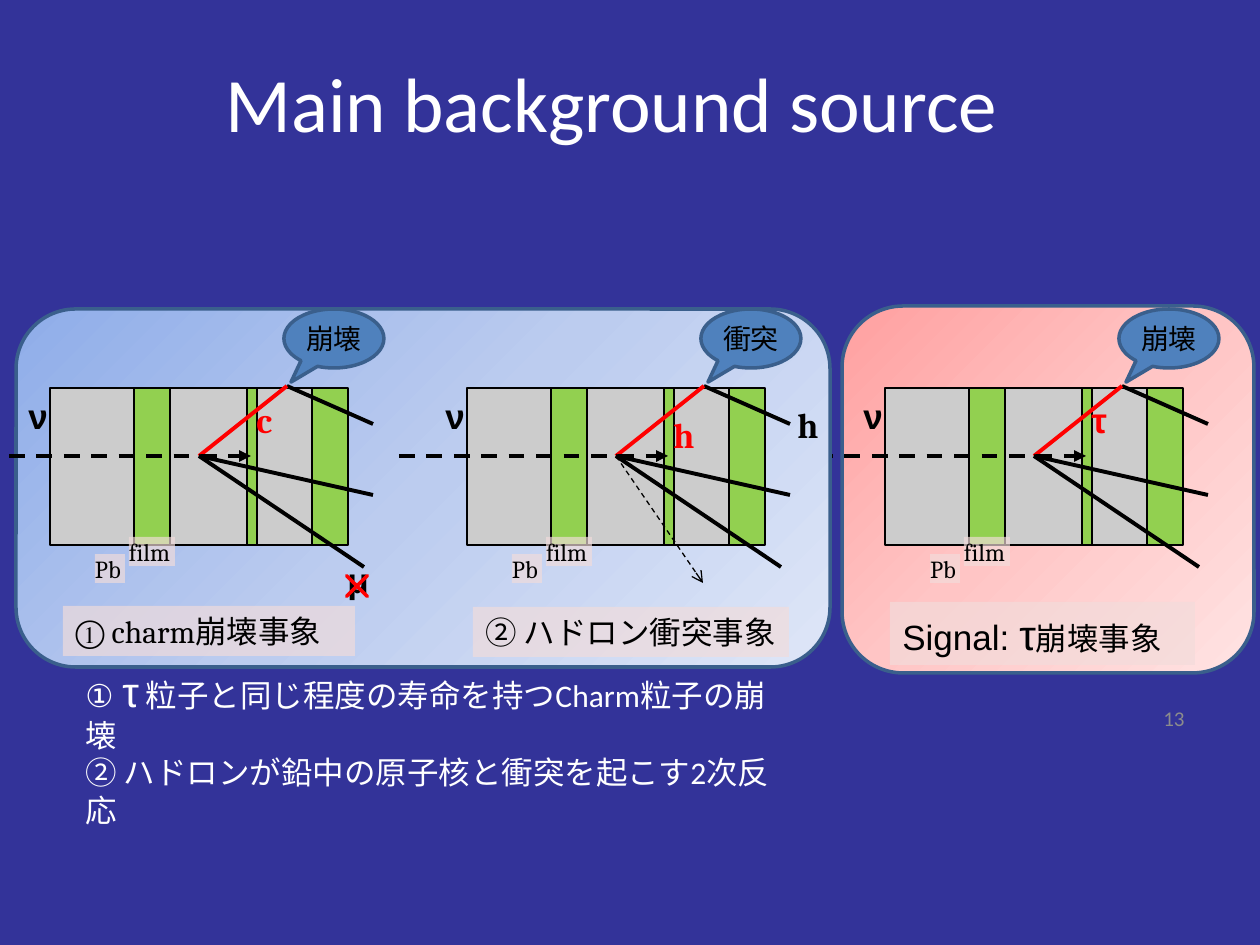
from copy import deepcopy
from lxml import etree
from pptx import Presentation
from pptx import util as u
from pptx.dml.color import RGBColor
from pptx.enum import dml, shapes, text
from pptx.oxml.ns import qn

PX = 914400 / 126
BLACK = RGBColor(0x00, 0x00, 0x00)
WHITE = RGBColor(0xFF, 0xFF, 0xFF)
RED = RGBColor(0xFF, 0x00, 0x00)
GRAY = RGBColor(0xCC, 0xCC, 0xCC)
GREEN = RGBColor(0x92, 0xD0, 0x50)
BLUE = RGBColor(0x4F, 0x81, 0xBD)
EDGE = RGBColor(0x3A, 0x5F, 0x8C)
PINK = RGBColor(0xF2, 0xDC, 0xDB)
MUTED = RGBColor(0x8C, 0x8C, 0x8C)
NAVY = RGBColor(0x33, 0x33, 0x99)
COOL = [RGBColor(0x8F, 0xAD, 0xE9), RGBColor(0xBC, 0xCC, 0xEF), RGBColor(0xDE, 0xE6, 0xF7)]
WARM = [RGBColor(0xFF, 0xA0, 0xA0), RGBColor(0xFF, 0xC5, 0xC5), RGBColor(0xFF, 0xE3, 0xE3)]
KIND = shapes.MSO_SHAPE
ALIGN = text.PP_ALIGN

deck = Presentation()
deck.slide_width, deck.slide_height = u.Inches(10), u.Inches(7.5)
slide = deck.slides.add_slide(deck.slide_layouts[6])
slide.background.fill.solid()
slide.background.fill.fore_color.rgb = NAVY


def draw(kind, area, fill=None, edge=None, width=2, alpha=None):
    place = [int(n * PX) for n in area]
    if kind is None:
        item = slide.shapes.add_textbox(*place)
    else:
        item = slide.shapes.add_shape(kind, *place)
        item.shadow.inherit = False
        if isinstance(fill, list):
            item.fill.gradient()
            item.fill.gradient_angle = 315
            stops = item._element.spPr.find(".//" + qn("a:gsLst"))
            stops.insert(1, deepcopy(stops[0]))
            for stop, tone, spot in zip(item.fill.gradient_stops, fill, (0, 0.5, 1)):
                stop.color.rgb, stop.position = tone, spot
        else:
            item.fill.solid()
            item.fill.fore_color.rgb = fill
        if alpha:
            tone = item._element.spPr.find(".//" + qn("a:srgbClr"))
            etree.SubElement(tone, qn("a:alpha"), val=str(alpha * 1000))
        if edge is None:
            item.line.fill.background()
        else:
            item.line.color.rgb, item.line.width = edge, u.Pt(width)
    item.text_frame.word_wrap = True
    item.text_frame.vertical_anchor = text.MSO_ANCHOR.TOP
    return item


def write(para, runs, color=BLACK, bold=False, align=ALIGN.LEFT):
    para.alignment = align
    para.font.color.rgb, para.font.bold = color, bold
    for words, size, face in runs:
        run = para.add_run()
        run.text = words
        font = para.font if len(runs) == 1 else run.font
        font.size, font.name = u.Pt(size), face


page = draw(None, (903, 687, 294, 63))
page.text_frame.vertical_anchor = text.MSO_ANCHOR.MIDDLE
write(page.text_frame.paragraphs[0], [("13", 12, "Calibri")], MUTED, align=ALIGN.RIGHT)
title = draw(None, (213, 49, 806, 106))
title.text_frame.word_wrap = False
write(title.text_frame.paragraphs[0], [("Main background source", 44, "Calibri")], WHITE)

bars = [(228, 85, GRAY), (312, 36, GREEN), (221, 36, GREEN),
        (170, 77, GRAY), (50, 84, GRAY), (134, 36, GREEN)]
tracks = [(287, 386, 373, 424, BLACK), (199, 456, 287, 386, RED),
          (199, 456, 373, 495, BLACK), (199, 456, 364, 567, BLACK)]
panels = [
    (835, "崩壊", [("τ", "Arial", 244, 392, RED)],
     (890, 602, 305, 63), [("Signal: ", 20, "Arial"), ("τ", 24, "Arial"), ("崩壊事象", 18, "Cambria")]),
    (0, "崩壊", [("c", "Cambria", 244, 392, RED), ("μ", "Arial", 335, 552, BLACK)],
     (63, 606, 292, 50), [("① charm崩壊事象", 18, "Cambria")]),
    (417, "衝突", [("h", "Cambria", 244, 407, RED), ("h", "Cambria", 368, 397, BLACK)],
     (473, 607, 316, 50), [("② ハドロン衝突事象", 18, "Cambria")]),
]
frames = {835: ((842, 306, 412, 367), WARM), 0: ((16, 309, 814, 358), COOL)}

for left, event, marks, spot, label in panels:
    if left in frames:
        area, tones = frames[left]
        draw(KIND.ROUNDED_RECTANGLE, area, tones, EDGE)

    beam = draw(None, (left + 16, 388, 60, 98)).text_frame.paragraphs[0]
    write(beam, [("ν", 20, "Arial")], bold=True, align=ALIGN.JUSTIFY)

    for x, wide, tone in bars:
        draw(KIND.RECTANGLE, (left + x, 388, wide, 157), tone, BLACK, 0.75)

    for words, face, x, y, tone in marks:
        mark = draw(None, (left + x, y, 58 if words == "μ" else 36, 62))
        write(mark.text_frame.paragraphs[0], [(words, 20, face)], tone, True, ALIGN.JUSTIFY)

    lines = [(*track, 2.25, None) for track in tracks]
    lines.append((max(9 - left, -18), 456, 251, 456, BLACK, 2.25, "triangle"))
    if left == 417:
        lines.append((199, 456, 286, 583, BLACK, 0.75, "arrow"))
    for x1, y1, x2, y2, tone, wide, head in lines:
        ends = [int(n * PX) for n in (left + x1, y1, left + x2, y2)]
        line = slide.shapes.add_connector(shapes.MSO_CONNECTOR.STRAIGHT, *ends)
        line.line.color.rgb, line.line.width = tone, u.Pt(wide)
        if head:
            line.line.dash_style = dml.MSO_LINE.DASH
            etree.SubElement(line.line._get_or_add_ln(), qn("a:tailEnd"), type=head)
        etree.SubElement(line._element.spPr, qn("a:effectLst"))

    if left == 0:
        cross = draw(KIND.MATH_MULTIPLY, (337, 566, 40, 40), BLUE, RED)
        cross.adjustments[0] = 0

    bubble = draw(KIND.OVAL_CALLOUT, (left + 284, 309, 100, 59), BLUE, EDGE)
    bubble.adjustments[0], bubble.adjustments[1] = -0.43, 0.74
    frame = bubble.text_frame
    frame.vertical_anchor = text.MSO_ANCHOR.MIDDLE
    frame.margin_left = frame.margin_right = frame.margin_top = frame.margin_bottom = int(2 * PX)
    write(frame.paragraphs[0], [(event, 16, "Cambria")], align=ALIGN.CENTER)

    for words, x, y, wide in (("Pb", 95, 554, 30), ("film", 129, 537, 46)):
        frame = draw(KIND.RECTANGLE, (left + x, y, wide, 29), PINK, alpha=67).text_frame
        frame.margin_left = frame.margin_right = frame.margin_top = frame.margin_bottom = 0
        write(frame.paragraphs[0], [(words, 14, "Cambria")])

    note = draw(KIND.RECTANGLE, spot, PINK, alpha=67)
    write(note.text_frame.paragraphs[0], label)

body = draw(None, (-53, 659, 858, 101)).text_frame
points = [
    [("① ", 18, "Arial"), ("τ", 24, "Arial"), (" 粒子と同じ程度の寿命を持つCharm粒子の崩壊", 18, "Calibri")],
    [("② ハドロンが鉛中の原子核と衝突を起こす2次反応", 18, "Calibri")],
]
for rank, runs in enumerate(points):
    para = body.add_paragraph() if rank else body.paragraphs[0]
    para.level = 2
    props = para._p.get_or_add_pPr()
    props.set("marL", str(u.Inches(1)))
    props.set("indent", "0")
    write(para, runs, WHITE)

deck.save("out.pptx")
